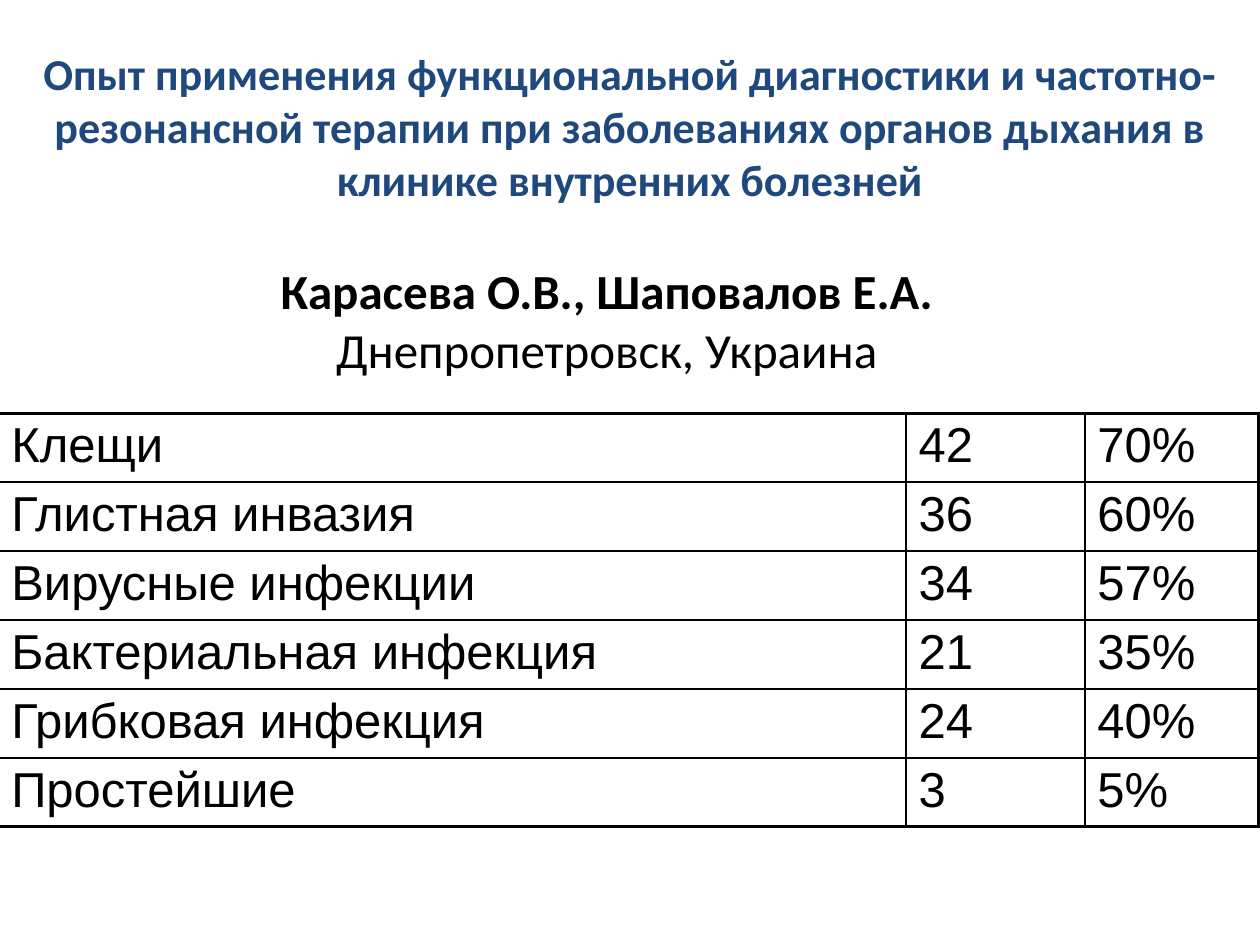
from pptx import Presentation
from pptx import util as u
from pptx.dml.color import RGBColor
from pptx.enum import text
from pptx.oxml import parse_xml
from pptx.oxml.ns import nsdecls

NAVY = RGBColor(0x1F, 0x49, 0x7D)
BLACK = RGBColor(0, 0, 0)
WIDTH, HEIGHT = u.Inches(10), u.Inches(7.5)

COLUMN_SHARES = (0.72, 0.142, 0.138)
ROW_HEIGHT = u.Inches(0.53)
THIN, THICK = 1, 2.25

FINDINGS = [
    ("Клещи", "42", "70%"),
    ("Глистная инвазия", "36", "60%"),
    ("Вирусные инфекции", "34", "57%"),
    ("Бактериальная инфекция", "21", "35%"),
    ("Грибковая инфекция", "24", "40%"),
    ("Простейшие", "3", "5%"),
]


def style(paragraph, font_name, size, color, bold=False):
    for run in paragraph.runs:
        run.font.name = font_name
        run.font.size = u.Pt(size)
        run.font.bold = bold
        run.font.color.rgb = color


def add_heading(slide, left, top, width, height, lines, size, color, anchor):
    """Add a centred text block; lines holds (wording, bold) pairs."""
    box = slide.shapes.add_textbox(u.Inches(left), u.Inches(top),
                                   u.Inches(width), u.Inches(height))
    frame = box.text_frame
    frame.word_wrap = True
    frame.vertical_anchor = anchor
    frame.text = "\n".join(wording for wording, _ in lines)
    for paragraph, (_, bold) in zip(frame.paragraphs, lines):
        paragraph.alignment = text.PP_ALIGN.CENTER
        style(paragraph, "Calibri", size, color, bold)


def set_borders(cell, widths):
    """Draw black borders, given in points as left, right, top, bottom."""
    properties = cell._tc.get_or_add_tcPr()
    for index, (side, width) in enumerate(zip("LRTB", widths)):
        properties.insert(index, parse_xml(
            f'<a:ln{side} {nsdecls("a")} w="{u.Pt(width)}"><a:solidFill>'
            f'<a:srgbClr val="{BLACK}"/></a:solidFill></a:ln{side}>'))


def add_findings(slide, left, top):
    rows, columns = len(FINDINGS), len(COLUMN_SHARES)
    table = slide.shapes.add_table(rows, columns, left, top, WIDTH,
                                   ROW_HEIGHT * rows).table
    table.first_row = table.horz_banding = False
    for column, share in zip(table.columns, COLUMN_SHARES):
        column.width = int(WIDTH * share)

    for r, finding in enumerate(FINDINGS):
        table.rows[r].height = ROW_HEIGHT
        for c, value in enumerate(finding):
            cell = table.cell(r, c)
            cell.margin_top = cell.margin_bottom = u.Inches(0.04)
            cell.text_frame.text = value
            style(cell.text_frame.paragraphs[0], "Arial", 28, BLACK)
            cell.fill.background()
            # The outer frame is thick, the inner grid thin
            on_edge = (c == 0, c == columns - 1, r == 0, r == rows - 1)
            set_borders(cell, [THICK if edge else THIN for edge in on_edge])


def main():
    deck = Presentation()
    deck.slide_width, deck.slide_height = WIDTH, HEIGHT
    slide = deck.slides.add_slide(deck.slide_layouts[6])

    # Title
    title = ("Опыт применения функциональной диагностики и "
             "частотно-резонансной терапии при заболеваниях органов дыхания "
             "в клинике внутренних болезней")
    add_heading(slide, 0, 0.29, 10, 1.42, [(title, True)], 25.2, NAVY,
                text.MSO_ANCHOR.MIDDLE)

    # Table of findings
    add_findings(slide, u.Inches(-0.01), u.Inches(3.28))

    # Authors and city
    authors = [("Карасева О.В., Шаповалов Е.А.", True),
               ("Днепропетровск, Украина", False)]
    add_heading(slide, 0.01, 2.02, 9.61, 1.04, authors, 28, BLACK,
                text.MSO_ANCHOR.TOP)

    deck.save("out.pptx")


if __name__ == "__main__":
    main()
